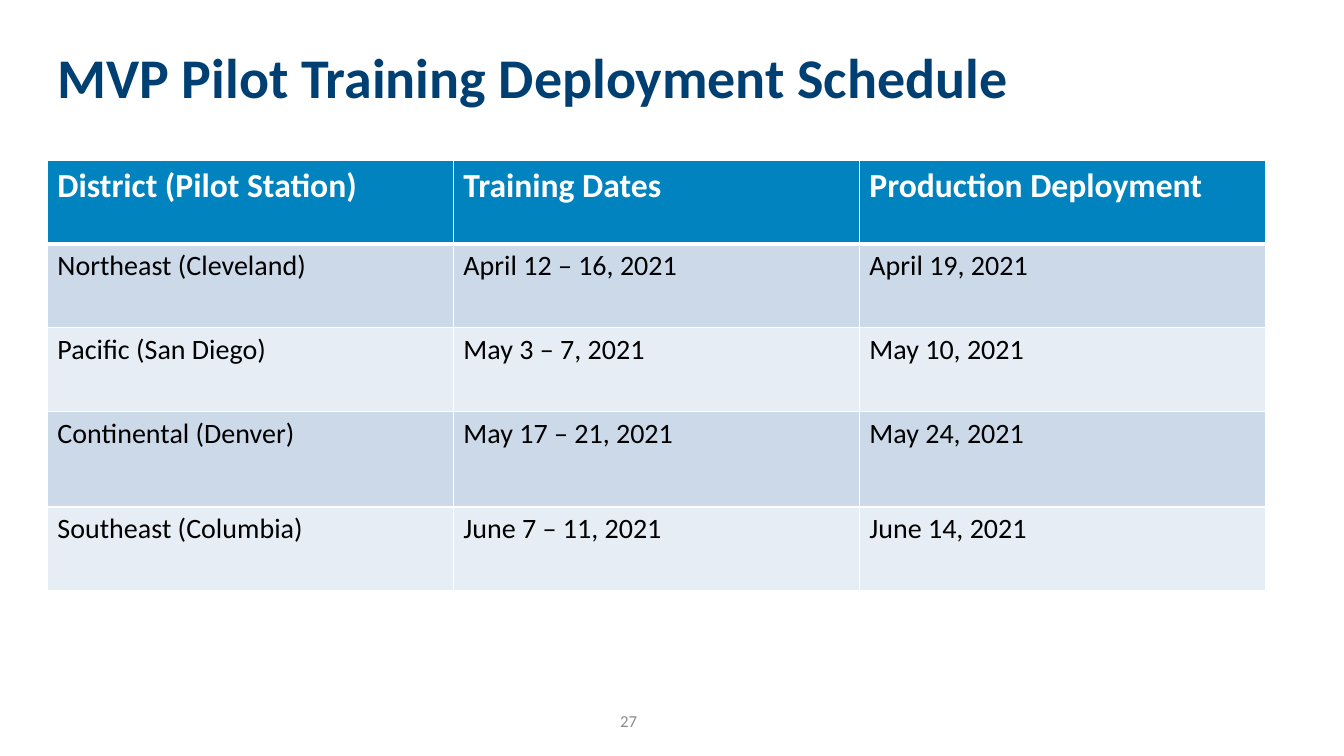
from lxml import etree
from pptx import Presentation
from pptx import util as u
from pptx.dml.color import RGBColor
from pptx.enum import text
from pptx.oxml.ns import qn

PX = 9144
HUES = {"navy": "003F72", "blue": "0083BE", "dark": "CCD9E8", "light": "E7EDF4",
        "white": "FFFFFF", "black": "000000", "gray": "8C8C8C"}
FONTS = {
    "title": {"name": "Calibri", "size": u.Pt(40), "bold": True},
    "head": {"name": "Calibri", "size": u.Pt(24), "bold": True},
    "body": {"name": "Calibri", "size": u.Pt(20), "bold": False},
    "page": {"name": "Calibri", "size": u.Pt(12), "bold": False},
}
ROWS = [
    ("District (Pilot Station)", "Training Dates", "Production Deployment"),
    ("Northeast (Cleveland)", "April 12 – 16, 2021", "April 19, 2021"),
    ("Pacific (San Diego)", "May 3 – 7, 2021", "May 10, 2021"),
    ("Continental (Denver)", "May 17 – 21, 2021", "May 24, 2021"),
    ("Southeast (Columbia)", "June 7 – 11, 2021", "June 14, 2021"),
]
TALL = [83, 83, 83, 95, 83]


def px(*nums):
    """Turn px lengths into EMU."""
    return [u.Emu(num * PX) for num in nums]


def color(hue):
    """Return the named color."""
    return RGBColor.from_string(HUES[hue])


def write(frame, words, style, hue, align):
    """Write one styled paragraph into a text frame."""
    para = frame.paragraphs[0]
    para.text = words
    para.alignment = align
    for key, value in FONTS[style].items():
        setattr(para.font, key, value)
    para.font.color.rgb = color(hue)
    return para


def edge(cell, side, width):
    """Draw one white border of a cell."""
    line = etree.SubElement(cell._tc.get_or_add_tcPr(), qn("a:ln" + side),
                            w=str(u.Pt(width)))
    fill = etree.SubElement(line, qn("a:solidFill"))
    etree.SubElement(fill, qn("a:srgbClr"), val=HUES["white"])


def title(slide, box):
    """Place the slide title in the box."""
    shape = slide.shapes.title
    for key, value in zip(("left", "top", "width", "height"), px(*box)):
        setattr(shape, key, value)
    frame = shape.text_frame
    frame.word_wrap = True
    frame.auto_size = text.MSO_AUTO_SIZE.NONE
    frame.vertical_anchor = text.MSO_ANCHOR.MIDDLE
    para = write(frame, "MVP Pilot Training Deployment Schedule", "title", "navy",
                 text.PP_ALIGN.LEFT)
    para.line_spacing = 0.9


def table(slide, box):
    """Place the schedule table in the box."""
    grid = slide.shapes.add_table(len(ROWS), len(ROWS[0]), *px(*box)).table
    for col in grid.columns:
        col.width = px(box[2])[0] // len(ROWS[0])
    for r, (row, tall) in enumerate(zip(ROWS, TALL)):
        grid.rows[r].height = px(tall)[0]
        style, ink = ("body", "black") if r else ("head", "white")
        back = ("light", "dark")[r % 2] if r else "blue"
        for c, words in enumerate(row):
            cell = grid.cell(r, c)
            write(cell.text_frame, words, style, ink, text.PP_ALIGN.LEFT)
            widths = {"L": 1, "R": 1, "T": 3 if r == 1 else 1, "B": 1 if r else 3}
            for side, width in widths.items():
                edge(cell, side, width)
            cell.fill.solid()
            cell.fill.fore_color.rgb = color(back)


def page(slide, box):
    """Place the page number in the box."""
    frame = slide.shapes.add_textbox(*px(*box)).text_frame
    frame.word_wrap = True
    frame.vertical_anchor = text.MSO_ANCHOR.MIDDLE
    write(frame, "27", "page", "gray", text.PP_ALIGN.CENTER)


def main():
    """Build the slide and save it."""
    deck = Presentation()
    deck.slide_width, deck.slide_height = px(1333, 750)
    slide = deck.slides.add_slide(deck.slide_layouts[5])
    title(slide, (47, 37, 1063, 85))
    table(slide, (47, 159, 1208, sum(TALL)))
    page(slide, (586, 695, 75, 40))
    deck.save("out.pptx")


if __name__ == "__main__":
    main()
